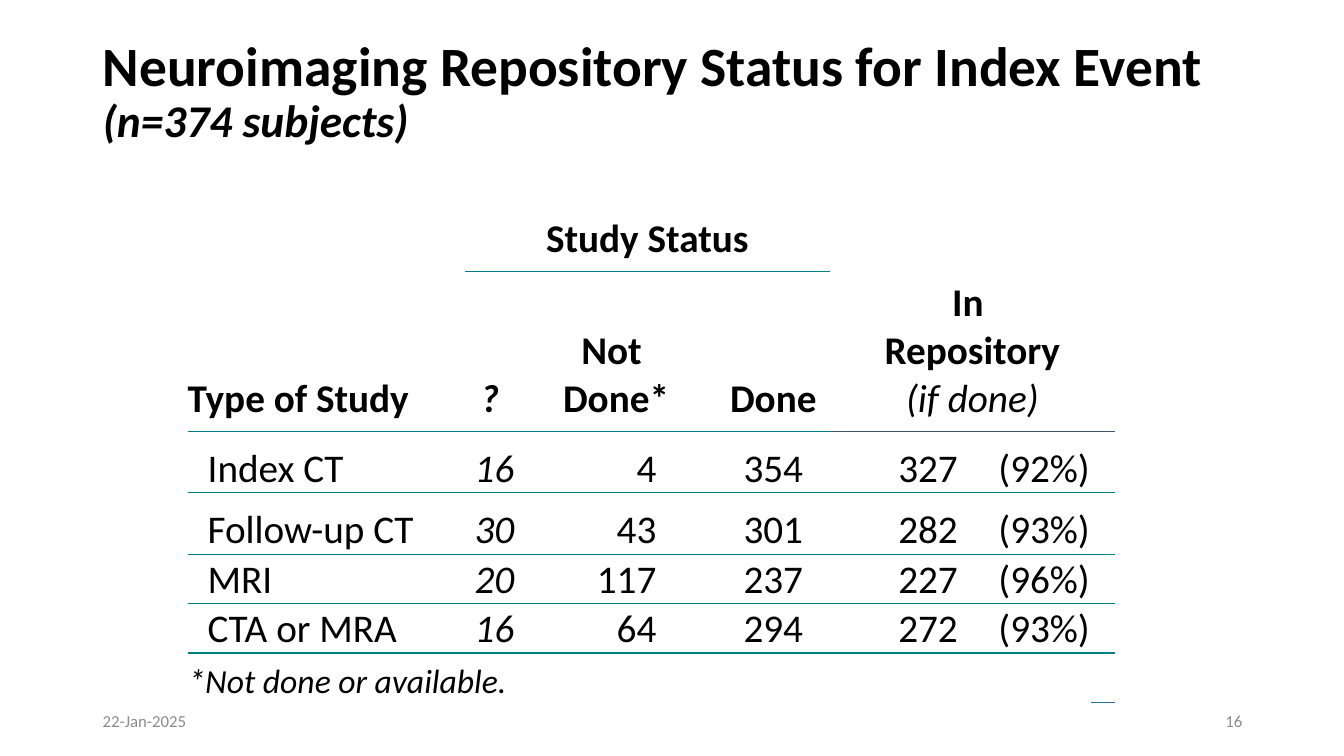
"""Build the slide on neuroimaging repository status for the index event."""
import pptx
import pptx.util
import pptx.dml.color
import pptx.enum.text
import pptx.oxml.ns
from lxml import etree

Inches, Pt = pptx.util.Inches, pptx.util.Pt
ALIGN = pptx.enum.text.PP_ALIGN
ANCHOR = pptx.enum.text.MSO_ANCHOR
L, C, R = ALIGN.LEFT, ALIGN.CENTER, ALIGN.RIGHT
TEAL, SLATE, BLUE = "008080", "44546A", "1D6FA9"
NO_STYLE = "{2D5ABB26-0587-4C30-8999-92F81FD0307C}"

TITLE = [("Neuroimaging Repository Status for Index Event", {"size": 39.6, "bold": True}),
         ("(n=374 subjects)", {"size": 32.4, "bold": True, "italic": True})]
FOOTERS = [(0.92, "22-Jan-2025", L), (9.42, "16", R)]

BOLD = {"bold": True}
ITALIC = {"italic": True}
HEADERS = [
    ((0, 0), (1, 0), [("Type of Study", BOLD)]),
    ((0, 1), (0, 3), [("Study Status", BOLD)]),
    ((0, 4), (1, 6), [("In ", BOLD), ("Repository", BOLD), ("(if done)", ITALIC)]),
    ((1, 1), (1, 1), [("?", {"bold": True, "italic": True})]),
    ((1, 2), (1, 2), [("Not ", BOLD), ("Done*", BOLD)]),
    ((1, 3), (1, 3), [("Done", BOLD)]),
]
STUDIES = [
    ("Index CT", "16", "4", "354", "327", "(92%)"),
    ("Follow-up CT", "30", "43", "301", "282", "(93%)"),
    ("MRI", "20", "117", "237", "227", "(96%)"),
    ("CTA or MRA", "16", "64", "294", "272", "(93%)"),
]
FOOTNOTE = "*Not done or available."
COLUMNS = [
    (2.75, L, 0.2, 0.01, {}),
    (0.5, R, 0.01, 0.01, ITALIC),
    (2, R, 0.01, 0.6, {}),
    (1.12, C, 0.01, 0.01, {}),
    (1.57, R, 0.01, 0.3, {}),
    (1.02, R, 0.01, 0.01, {}),
    (0.11, L, 0, 0, {}),
]
ROW_HEIGHTS = [0.76, 1.59, 0.61, 0.61, 0.49, 0.49, 0.49]


def rgb(hex_color):
    return pptx.dml.color.RGBColor.from_string(hex_color)


def add_run(p, text, color="000000", **formats):
    r = p.add_run()
    r.text = text
    r.font.color.rgb = rgb(color)
    formats = {"name": "Calibri", "bold": False, "italic": False, **formats}
    formats["size"] = Pt(formats["size"])
    for key, value in formats.items():
        setattr(r.font, key, value)


def fill_cell(cell, lines, align, insets, size=28, spacing=None):
    cell.vertical_anchor = ANCHOR.BOTTOM
    for side, inset in zip(("left", "top", "right", "bottom"), insets):
        setattr(cell, "margin_" + side, Inches(inset))
    tf = cell.text_frame
    for i, (text, formats) in enumerate(lines):
        p = tf.paragraphs[0] if i == 0 else tf.add_paragraph()
        p.alignment = align
        p.line_spacing = spacing
        add_run(p, text, size=size, **formats)


def edge_color(edge, col):
    """Return the colour of the rule below row number edge, or None."""
    if edge == 0:
        return TEAL if 1 <= col <= 3 else None
    if edge == 1:
        return SLATE if col >= 4 else TEAL
    if edge == len(ROW_HEIGHTS) - 1:
        return BLUE if col == len(COLUMNS) - 1 else None
    return TEAL if edge > 0 else None


def add_border(cell, tag, color):
    qn = pptx.oxml.ns.qn
    ln = etree.Element(qn("a:" + tag), w=str(Pt(1)))
    fill = etree.SubElement(ln, qn("a:solidFill"))
    etree.SubElement(fill, qn("a:srgbClr"), val=color)
    cell._tc.get_or_add_tcPr().insert(0, ln)


def add_title(s):
    title = s.shapes.title
    title.left, title.top = Inches(0.92), Inches(0.42)
    title.width, title.height = Inches(11.5), Inches(1)
    tf = title.text_frame
    tf.auto_size = pptx.enum.text.MSO_AUTO_SIZE.NONE
    tf.vertical_anchor = ANCHOR.MIDDLE
    p = tf.paragraphs[0]
    p.alignment, p.line_spacing = L, 0.9
    for i, (text, formats) in enumerate(TITLE):
        if i:
            p.add_line_break()
        add_run(p, text, **formats)


def add_status_table(s):
    widths = [column[0] for column in COLUMNS]
    frame = s.shapes.add_table(len(ROW_HEIGHTS), len(COLUMNS), Inches(1.86), Inches(1.93),
                               Inches(sum(widths)), Inches(sum(ROW_HEIGHTS)))
    table = frame.table
    table.first_row = table.horz_banding = False
    frame._element.find(".//" + pptx.oxml.ns.qn("a:tableStyleId")).text = NO_STYLE
    for col, width in zip(table.columns, widths):
        col.width = Inches(width)
    for row, height in zip(table.rows, ROW_HEIGHTS):
        row.height = Inches(height)

    for start, end, lines in HEADERS:
        cell = table.cell(*start)
        if start != end:
            cell.merge(table.cell(*end))
        first = start == (0, 0)
        fill_cell(cell, lines, L if first else C, (0 if first else 0.08, 0.08, 0.08, 0.08),
                  spacing=Pt(20) if first else None)
    for row, study in enumerate(STUDIES, 2):
        for col, text in enumerate(study):
            _, align, left, right, formats = COLUMNS[col]
            fill_cell(table.cell(row, col), [(text, formats)], align, (left, 0.01, right, 0))
    last = len(ROW_HEIGHTS) - 1
    note = table.cell(last, 0)
    note.merge(table.cell(last, 5))
    fill_cell(note, [(FOOTNOTE, ITALIC)], L, (0.01, 0.01, 0.01, 0), size=24)

    for row in range(len(ROW_HEIGHTS)):
        for col in range(len(COLUMNS)):
            cell = table.cell(row, col)
            cell.fill.background()
            for tag, edge in (("lnB", row), ("lnT", row - 1)):
                color = edge_color(edge, col)
                if color:
                    add_border(cell, tag, color)


def add_footers(s):
    for left, text, align in FOOTERS:
        box = s.shapes.add_textbox(Inches(left), Inches(6.95), Inches(3), Inches(0.4))
        tf = box.text_frame
        tf.word_wrap = True
        tf.vertical_anchor = ANCHOR.MIDDLE
        p = tf.paragraphs[0]
        p.alignment = align
        add_run(p, text, color="8C8C8C", size=12)


def main():
    prs = pptx.Presentation()
    prs.slide_width, prs.slide_height = Inches(13.33), Inches(7.5)
    s = prs.slides.add_slide(prs.slide_layouts[5])
    add_title(s)
    add_status_table(s)
    add_footers(s)
    prs.save("out.pptx")


if __name__ == "__main__":
    main()
